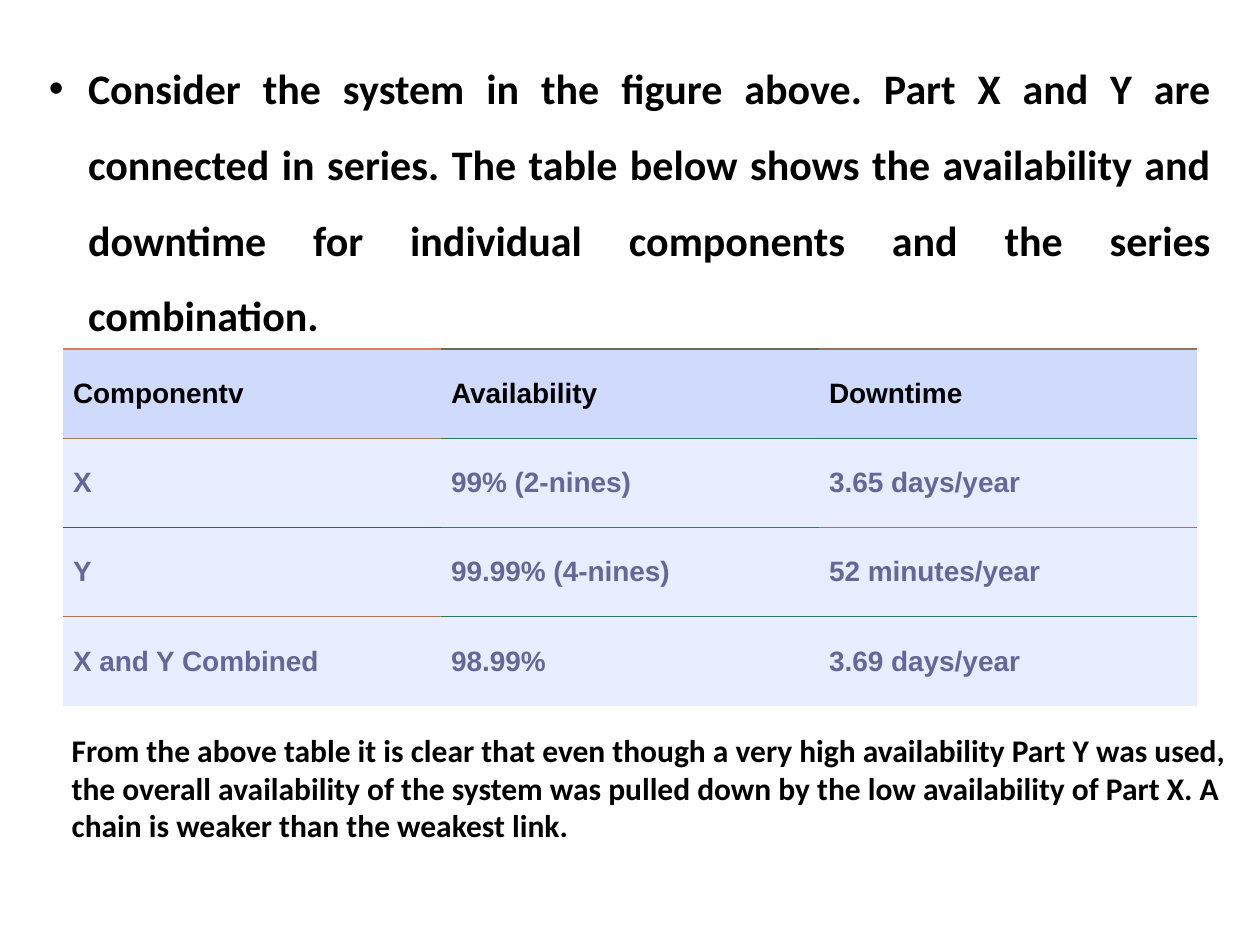
import pptx
import pptx.dml.color
import pptx.enum.text
import pptx.oxml
import pptx.oxml.ns
import pptx.util
from lxml import etree

RGB = pptx.dml.color.RGBColor
BLACK = RGB(0x00, 0x00, 0x00)
SLATE = RGB(0x66, 0x66, 0x99)
HEADER_FILL = RGB(0xD0, 0xDA, 0xFD)
BODY_FILL = RGB(0xE8, 0xED, 0xFF)

# Colours of the horizontal rules, from the table's top edge to its bottom
RULES = [[RGB.from_string(c) for c in line.split()] for line in (
    "E07D53 60705C 98705C",
    "987E53 30715C 30735C",
    "18705C 48705C B0745C",
    "B0735C 30745C 30765C",
    "FFFFFF FFFFFF FFFFFF",
)]

INTRO = ("Consider the system in the figure above. Part X and Y are connected in "
         "series. The table below shows the availability and downtime for individual "
         "components and the series combination.")
AVAILABILITY = [
    ("Componentv", "Availability", "Downtime"),
    ("X", "99% (2-nines)", "3.65 days/year"),
    ("Y", "99.99% (4-nines)", "52 minutes/year"),
    ("X and Y Combined", "98.99%", "3.69 days/year"),
]
CONCLUSION = ("From the above table it is clear that even though a very high "
              "availability Part Y was used, the overall availability of the system "
              "was pulled down by the low availability of Part X. A chain is weaker "
              "than the weakest link.")


class Deck:
    """Style and current slide; places are percentages of the slide's size."""

    text_font = "Calibri"
    table_font = "Arial"
    table_size = 16
    cell_margin = pptx.util.Inches(0.08)
    rule_width = pptx.util.Pt(0.75)

    def __init__(self, width, height):
        self.prs = pptx.Presentation()
        self.prs.slide_width = pptx.util.Inches(width)
        self.prs.slide_height = pptx.util.Inches(height)
        self.slide = self.prs.slides.add_slide(self.prs.slide_layouts[6])

    def place(self, x, y, w, h):
        across, down = self.prs.slide_width / 100, self.prs.slide_height / 100
        return [round(v) for v in (x * across, y * down, w * across, h * down)]

    def run(self, p, text, name, size, color):
        r = p.add_run()
        r.text = text
        style = {"name": name, "size": pptx.util.Pt(size), "bold": True}
        for key, value in style.items():
            setattr(r.font, key, value)
        r.font.color.rgb = color

    def bullet(self, p, indent):
        pPr = p._p.get_or_add_pPr()
        pPr.set("marL", str(indent))
        pPr.set("indent", str(-indent))
        for tag, key, value in (("a:buFont", "typeface", "Arial"),
                                ("a:buChar", "char", "•")):
            etree.SubElement(pPr, pptx.oxml.ns.qn(tag)).set(key, value)

    def text(self, box, text, size, indent=None, **layout):
        sp = self.slide.shapes.add_textbox(*self.place(*box))
        tf = sp.text_frame
        tf.word_wrap = True
        p = tf.paragraphs[0]
        if indent:
            self.bullet(p, indent)
        for key, value in layout.items():
            setattr(p, key, value)
        self.run(p, text, self.text_font, size, BLACK)

    def border(self, cell, side, color=None):
        tcPr = cell._tc.get_or_add_tcPr()
        ln = etree.SubElement(tcPr, pptx.oxml.ns.qn("a:ln" + side))
        if color is None:
            ln.set("w", "0")
            etree.SubElement(ln, pptx.oxml.ns.qn("a:noFill"))
            return
        ln.set("w", str(self.rule_width))
        fill = etree.SubElement(ln, pptx.oxml.ns.qn("a:solidFill"))
        etree.SubElement(fill, pptx.oxml.ns.qn("a:srgbClr")).set("val", str(color))

    def cell(self, cell, text, top, bottom, fill, color):
        layout = {"vertical_anchor": pptx.enum.text.MSO_ANCHOR.MIDDLE}
        for side in ("left", "right", "top", "bottom"):
            layout["margin_" + side] = self.cell_margin
        for key, value in layout.items():
            setattr(cell, key, value)
        for side, rule in (("L", None), ("R", None), ("T", top), ("B", bottom)):
            self.border(cell, side, rule)
        cell.fill.solid()
        cell.fill.fore_color.rgb = fill
        self.run(cell.text_frame.paragraphs[0], text,
                 self.table_font, self.table_size, color)

    def table(self, box, rows, rules):
        frame = self.slide.shapes.add_table(len(rows), len(rows[0]), *self.place(*box))
        tbl = frame.table
        tbl.horz_banding = False
        for i, row in enumerate(rows):
            fill, color = (BODY_FILL, SLATE) if i else (HEADER_FILL, BLACK)
            for j, text in enumerate(row):
                self.cell(tbl.cell(i, j), text, rules[i][j], rules[i + 1][j],
                          fill, color)


def main():
    deck = Deck(10, 7.5)
    # Introduction above the table
    deck.text((2.9, 3.33, 94.2, 33.6), INTRO, 24, indent=pptx.util.Inches(0.31),
              alignment=pptx.enum.text.PP_ALIGN.JUSTIFY, line_spacing=1.5)
    # Availability and downtime by component
    deck.table((5, 36.93, 90, 37.8), AVAILABILITY, RULES)
    # Conclusion below the table
    deck.text((4.7, 76.67, 94.2, 13.47), CONCLUSION, 18)
    deck.prs.save("out.pptx")


if __name__ == "__main__":
    main()
